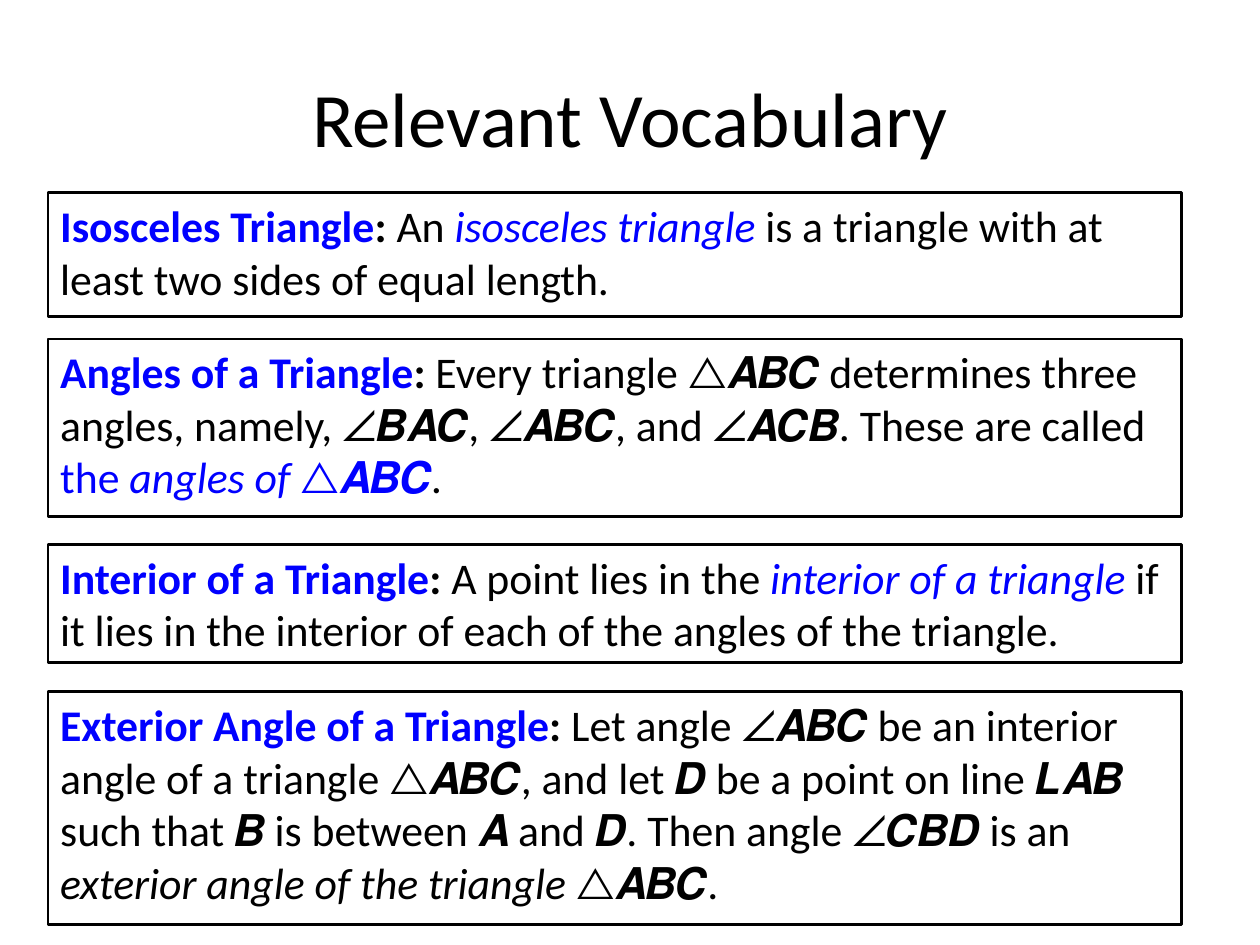
from pptx import Presentation
from pptx.dml.color import RGBColor
from pptx.enum.shapes import MSO_SHAPE
from pptx.enum.text import MSO_ANCHOR, PP_ALIGN
from pptx.util import Inches, Pt

COLORS = {"ink": "000000", "term": "0000FF"}
FONT = "Calibri"
BOX_LEFT, BOX_WIDTH = 0.38, 9

DEFINITIONS = [
    (1.53, 0.98, "Isosceles Triangle", [
        ("An ", "ink", False),
        ("isosceles triangle ", "term", True),
        ("is a triangle with at least two sides of equal length.", "ink", False),
    ]),
    (2.69, 1.41, "Angles of a Triangle", [
        ("Every triangle △𝑨𝑩𝑪 determines three angles, namely, "
         "∠𝑩𝑨𝑪, ∠𝑨𝑩𝑪, and ∠𝑨𝑪𝑩. These are called ", "ink", False),
        ("the ", "term", False),
        ("angles of ", "term", True),
        ("△𝑨𝑩𝑪", "term", False),
        (".", "ink", True),
    ]),
    (4.32, 0.94, "Interior of a Triangle", [
        ("A point lies in the ", "ink", False),
        ("interior of a triangle ", "term", True),
        ("if it lies in the interior of each of the angles of the triangle.", "ink", False),
    ]),
    (5.49, 1.85, "Exterior Angle of a Triangle", [
        ("Let angle ∠𝑨𝑩𝑪 be an interior angle of a triangle △𝑨𝑩𝑪, "
         "and let 𝑫 be a point on line 𝑳𝑨𝑩 such that 𝑩 is between 𝑨 and 𝑫. "
         "Then angle ∠𝑪𝑩𝑫 is an ", "ink", False),
        ("exterior angle of the triangle ", "ink", True),
        ("△𝑨𝑩𝑪.", "ink", False),
    ]),
]


def format_run(run, size, color, bold=False, italic=False):
    """Set the font of one run."""
    run.font.name = FONT
    run.font.size = Pt(size)
    run.font.bold = bold
    run.font.italic = italic
    run.font.color.rgb = RGBColor.from_string(COLORS[color])


def add_title(slide, text):
    """Add the centred slide title."""
    shape = slide.shapes.add_textbox(Inches(0.5), Inches(0.3), Inches(9), Inches(1.25))
    text_frame = shape.text_frame
    text_frame.word_wrap = True
    text_frame.vertical_anchor = MSO_ANCHOR.MIDDLE
    text_frame.text = text
    paragraph = text_frame.paragraphs[0]
    paragraph.alignment = PP_ALIGN.CENTER
    format_run(paragraph.runs[0], 44, "ink")


def add_definition(slide, top, height, term, meaning):
    """Add an outlined box with a bold term and its meaning."""
    shape = slide.shapes.add_shape(
        MSO_SHAPE.RECTANGLE, Inches(BOX_LEFT), Inches(top), Inches(BOX_WIDTH), Inches(height))
    shape.shadow.inherit = False
    shape.fill.background()
    shape.line.color.rgb = RGBColor.from_string(COLORS["ink"])
    shape.line.width = Pt(1.5)
    text_frame = shape.text_frame
    text_frame.word_wrap = True
    text_frame.vertical_anchor = MSO_ANCHOR.TOP
    paragraph = text_frame.paragraphs[0]
    paragraph.alignment = PP_ALIGN.LEFT
    heading = [(term, "term", True, False), (": ", "ink", True, False)]
    body = [(text, color, False, italic) for text, color, italic in meaning]
    for text, color, bold, italic in heading + body:
        run = paragraph.add_run()
        run.text = text
        format_run(run, 25, color, bold, italic)


def main():
    """Build the vocabulary slide and save it."""
    presentation = Presentation()
    presentation.slide_width = Inches(10)
    presentation.slide_height = Inches(7.5)
    slide = presentation.slides.add_slide(presentation.slide_layouts[6])
    add_title(slide, "Relevant Vocabulary")
    for definition in DEFINITIONS:
        add_definition(slide, *definition)
    presentation.save("out.pptx")


if __name__ == "__main__":
    main()
